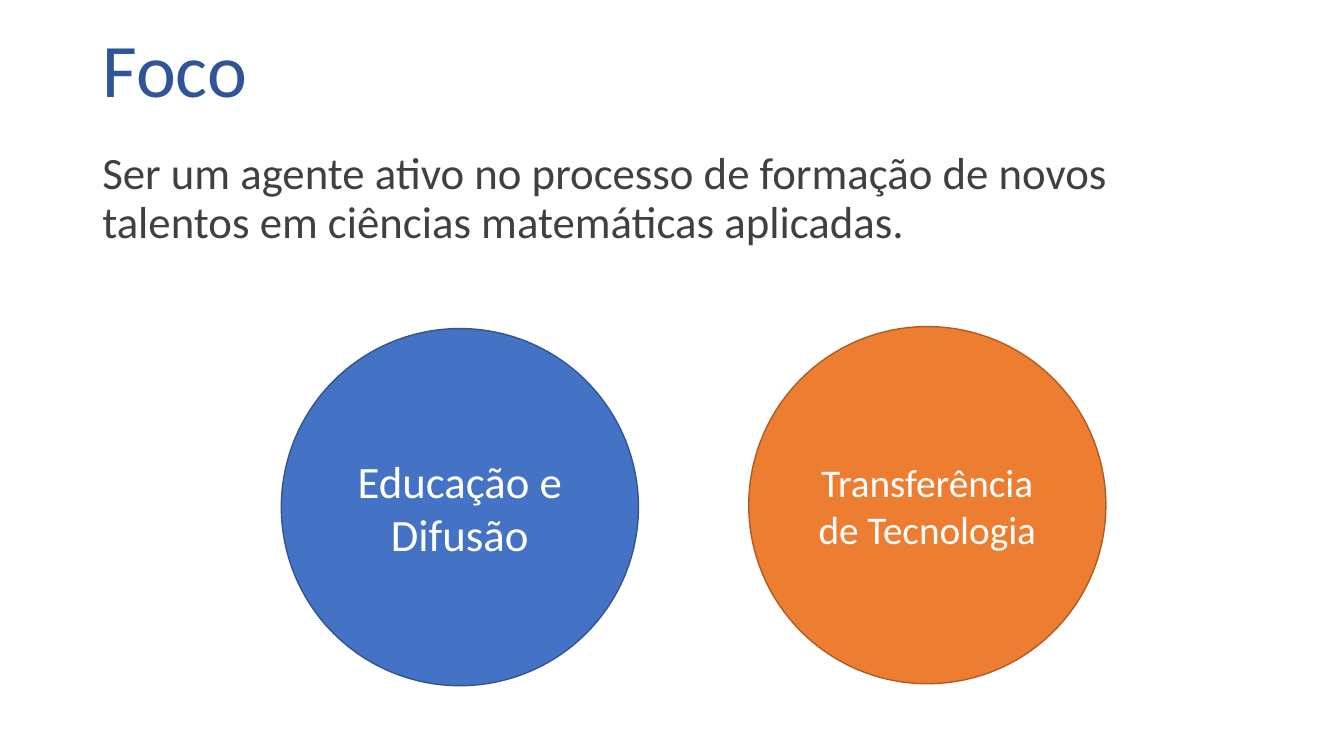
from dataclasses import dataclass

from pptx import Presentation
from pptx.dml.color import RGBColor
from pptx.enum.shapes import MSO_SHAPE as Shape
from pptx.enum.text import MSO_ANCHOR as Anchor, PP_ALIGN as Align
from pptx.util import Cm, Pt


@dataclass(frozen=True)
class Theme:
    font: str = "Calibri"
    title: str = "2F5597"
    body: str = "404040"
    light: str = "FFFFFF"
    blue: str = "4472C4"
    blue_line: str = "325491"
    orange: str = "ED7D31"
    orange_line: str = "AF5C24"
    title_size: int = 54
    body_size: int = 32
    small_size: int = 28
    line_width: int = 1


THEME = Theme()


def write(shape, text, size, color, anchor, align=Align.LEFT, line_spacing=1.0):
    frame = shape.text_frame
    frame.word_wrap = True
    frame.vertical_anchor = anchor
    paragraph = frame.paragraphs[0]
    paragraph.alignment = align
    paragraph.line_spacing = line_spacing
    run = paragraph.add_run()
    run.text = text
    run.font.name = THEME.font
    run.font.size = Pt(size)
    run.font.color.rgb = RGBColor.from_string(color)


def add_heading(slide, left, top, width, height, text):
    box = slide.shapes.add_textbox(left, top, width, height)
    write(box, text, THEME.title_size, THEME.title, Anchor.MIDDLE, line_spacing=0.9)


def add_statement(slide, left, top, width, height, text):
    box = slide.shapes.add_textbox(left, top, width, height)
    write(box, text, THEME.body_size, THEME.body, Anchor.TOP, line_spacing=0.9)


def add_circle(slide, left, top, diameter, text, size, fill, line):
    circle = slide.shapes.add_shape(Shape.OVAL, left, top, diameter, diameter)
    circle.shadow.inherit = False
    circle.fill.solid()
    circle.fill.fore_color.rgb = RGBColor.from_string(fill)
    circle.line.color.rgb = RGBColor.from_string(line)
    circle.line.width = Pt(THEME.line_width)
    write(circle, text, size, THEME.light, Anchor.MIDDLE, Align.CENTER)


def add_focus_areas(slide, left, top, width, diameter):
    add_circle(slide, left, top + Cm(0.05), diameter, "Educação e Difusão",
               THEME.body_size, THEME.blue, THEME.blue_line)
    add_circle(slide, left + width - diameter, top, diameter, "Transferência de Tecnologia",
               THEME.small_size, THEME.orange, THEME.orange_line)


def main():
    presentation = Presentation()
    presentation.slide_width = Cm(33.87)
    presentation.slide_height = Cm(19.05)
    slide = presentation.slides.add_slide(presentation.slide_layouts[6])

    margin = Cm(2.33)
    heading_height = Cm(3.68)
    add_heading(slide, margin, 0, Cm(27.91), heading_height, "Foco")
    add_statement(slide, margin, heading_height, Cm(29.21), Cm(3.15),
                  "Ser um agente ativo no processo de formação de novos "
                  "talentos em ciências matemáticas aplicadas.")
    add_focus_areas(slide, Cm(7.09), Cm(8.23), Cm(20.78), Cm(9))

    presentation.save("out.pptx")


if __name__ == "__main__":
    main()
